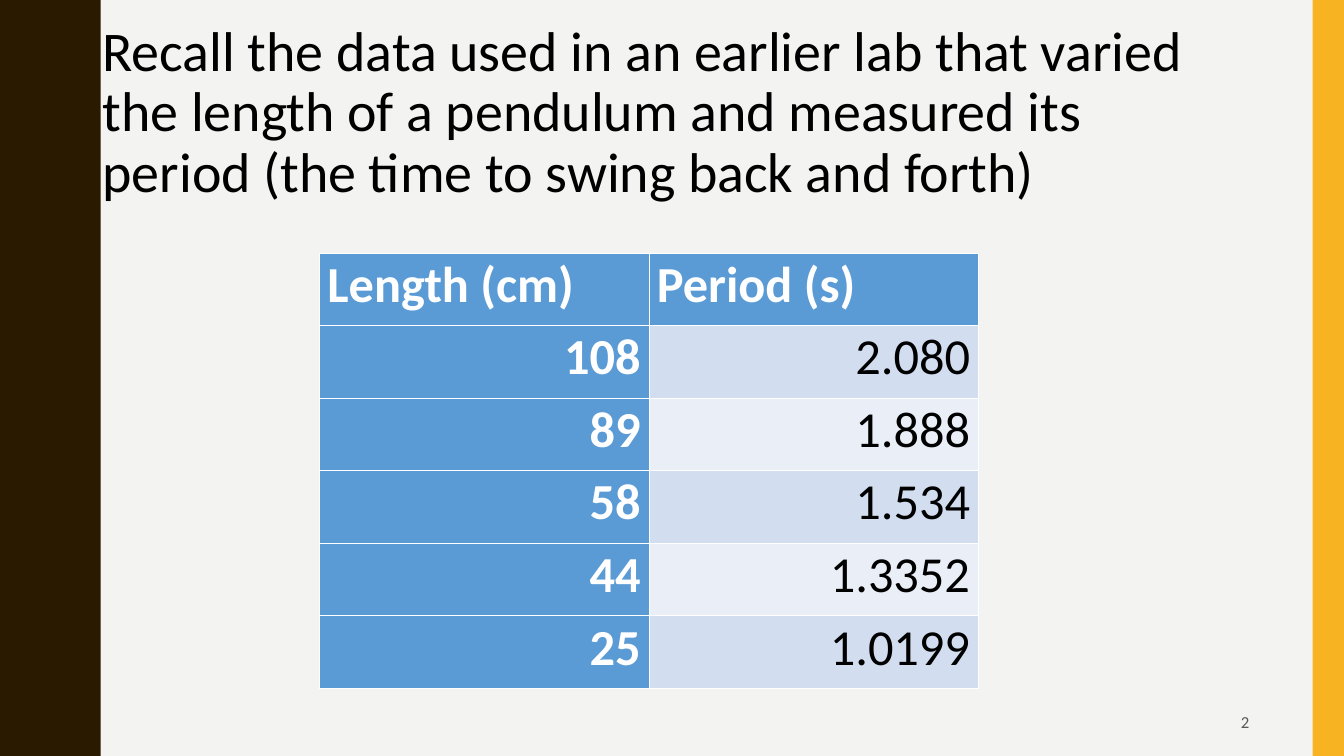
from lxml.etree import SubElement
from pptx import Presentation
from pptx.dml.color import RGBColor
from pptx.enum.shapes import MSO_SHAPE as Shape
from pptx.enum.text import MSO_ANCHOR as Anchor, PP_ALIGN as Align
from pptx.oxml.ns import qn
from pptx.util import Inches, Pt

COLORS = {
    "background": "F3F3F2", "brown": "2A1A00", "gold": "F8B323",
    "black": "000000", "white": "FFFFFF", "gray": "595959",
    "blue": "5B9BD5", "band_dark": "D2DEEF", "band_light": "EAEFF7",
}
FONT = "Calibri"
WIDTH, HEIGHT = 13.34, 7.5

TITLE = ("Recall the data used in an earlier lab that varied the length of a "
         "pendulum and measured its period (the time to swing back and forth)")
PENDULUM_DATA = [
    ("Length (cm)", "Period (s)"),
    ("108", "2.080"),
    ("89", "1.888"),
    ("58", "1.534"),
    ("44", "1.3352"),
    ("25", "1.0199"),
]

# Rising half of one wave of the left edge; the other half mirrors it
WAVE_LENGTH = 1.5
HALF_WAVE = [
    (0.78, 0), (0.78, 0.07), (0.79, 0.14), (0.8, 0.2), (0.81, 0.25),
    (0.83, 0.29), (0.85, 0.33), (0.87, 0.38), (0.89, 0.42), (0.91, 0.46),
    (0.93, 0.5), (0.95, 0.55), (0.96, 0.61), (0.97, 0.68), (0.97, 0.75),
]


def color(name):
    return RGBColor.from_string(COLORS[name])


def paint(shape, fill):
    shape.shadow.inherit = False
    shape.fill.solid()
    shape.fill.fore_color.rgb = color(fill)
    shape.line.fill.background()


def style_paragraph(paragraph, size, ink, align=Align.LEFT, spacing=1.0, bold=False):
    paragraph.alignment = align
    paragraph.line_spacing = spacing
    font = paragraph.font
    font.name, font.size, font.bold = FONT, Pt(size), bold
    font.color.rgb = color(ink)


def add_wavy_edge(slide):
    falling = [(x, WAVE_LENGTH - y) for x, y in reversed(HALF_WAVE[1:-1])]
    wave = HALF_WAVE + falling
    points = [(x, y + number * WAVE_LENGTH)
              for number in range(round(HEIGHT / WAVE_LENGTH)) for x, y in wave]
    points += [(0.78, HEIGHT), (0, HEIGHT)]
    builder = slide.shapes.build_freeform(0, 0, scale=Inches(1))
    builder.add_line_segments(points, close=True)
    paint(builder.convert_to_shape(), "brown")


def add_text(slide, box, text, **style):
    shape = slide.shapes.add_textbox(*map(Inches, box))
    frame = shape.text_frame
    frame.word_wrap = True
    frame.vertical_anchor = Anchor.MIDDLE
    frame.text = text
    style_paragraph(frame.paragraphs[0], **style)


def add_borders(cell, widths):
    properties = cell._tc.get_or_add_tcPr()
    for side, width in widths.items():
        line = SubElement(properties, qn(f"a:ln{side}"), w=str(Pt(width)))
        fill = SubElement(line, qn("a:solidFill"))
        SubElement(fill, qn("a:srgbClr"), val=COLORS["white"])


def fill_cell(cell, text, row, column):
    header = row == 0
    strong = header or column == 0
    band = "band_dark" if row % 2 else "band_light"

    cell.text = text
    cell.margin_left = cell.margin_right = Inches(0.08)
    cell.margin_top = cell.margin_bottom = 0
    style_paragraph(cell.text_frame.paragraphs[0], size=36, spacing=1.02,
                    ink="white" if strong else "black", bold=strong,
                    align=Align.LEFT if header else Align.RIGHT)
    # A heavier rule separates the header from the values
    add_borders(cell, {"L": 0.45, "R": 0.45,
                       "T": 1.47 if row == 1 else 0.45,
                       "B": 1.47 if header else 0.45})
    cell.fill.solid()
    cell.fill.fore_color.rgb = color("blue" if strong else band)


def add_data_table(slide, left, top, column_width, row_height):
    rows, columns = len(PENDULUM_DATA), len(PENDULUM_DATA[0])
    table = slide.shapes.add_table(
        rows, columns, Inches(left), Inches(top),
        Inches(column_width * columns), Inches(row_height * rows)).table
    for row, values in enumerate(PENDULUM_DATA):
        for column, text in enumerate(values):
            fill_cell(table.cell(row, column), text, row, column)


def main():
    presentation = Presentation()
    presentation.slide_width = Inches(WIDTH)
    presentation.slide_height = Inches(HEIGHT)
    slide = presentation.slides.add_slide(presentation.slide_layouts[6])

    # Background and side bands
    slide.background.fill.solid()
    slide.background.fill.fore_color.rgb = color("background")
    add_wavy_edge(slide)
    gold_band = slide.shapes.add_shape(
        Shape.RECTANGLE, Inches(13.03), 0, Inches(0.31), Inches(HEIGHT))
    paint(gold_band, "gold")

    # Title, measurements and slide number
    add_text(slide, (0.92, 0.4, 11.5, 1.45), TITLE, size=40, ink="black", spacing=0.9)
    add_data_table(slide, left=3.17, top=2.51, column_width=3.27, row_height=0.72)
    add_text(slide, (9.42, 6.97, 3.08, 0.38), "2", size=12, ink="gray", align=Align.RIGHT)

    presentation.save("out.pptx")


if __name__ == "__main__":
    main()
